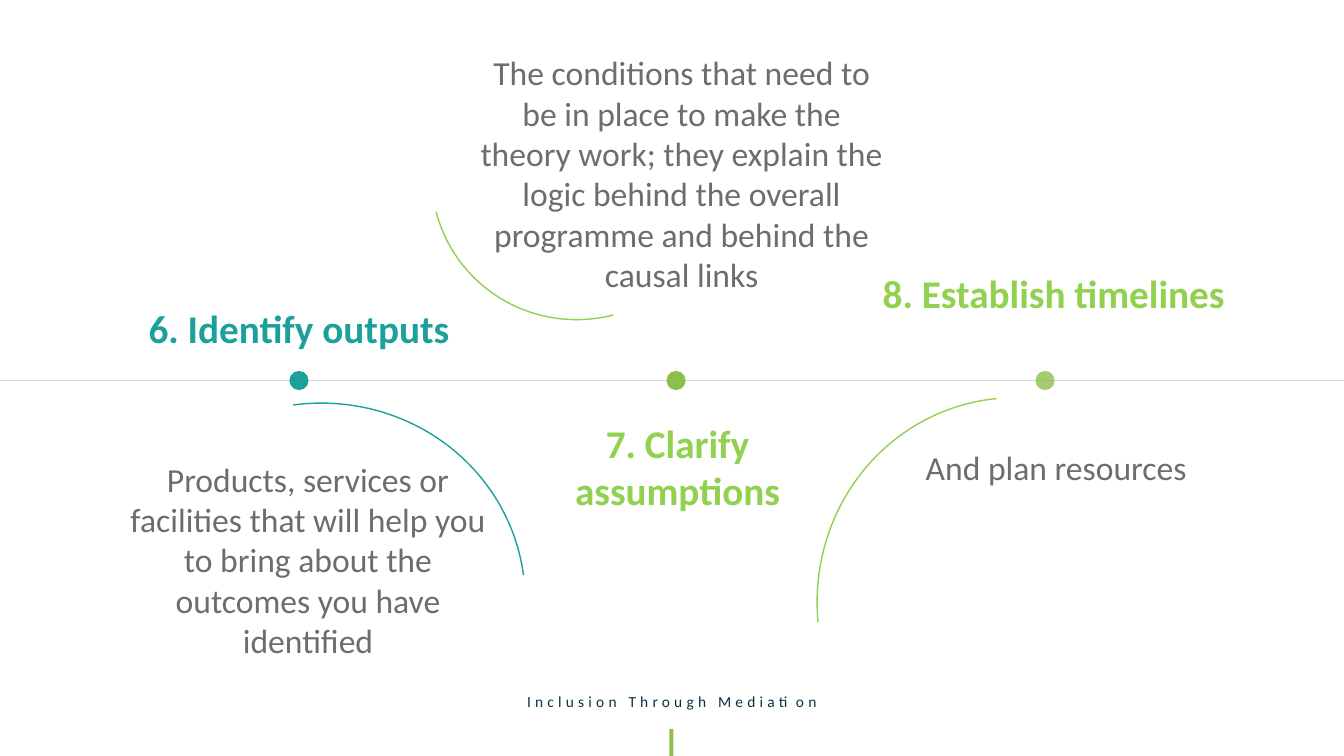
import dataclasses

import lxml.etree
import pptx
import pptx.dml.color
import pptx.enum.shapes
import pptx.enum.text
import pptx.oxml.ns
import pptx.util

Inches = pptx.util.Inches
Pt = pptx.util.Pt
Shape = pptx.enum.shapes.MSO_SHAPE


@dataclasses.dataclass(frozen=True)
class Theme:
    font: str = "Calibri"
    background: str = "FFFFFF"
    axis: str = "D9D9D9"
    teal: str = "1BA19A"
    green: str = "8CBF4B"
    lime: str = "92D050"
    body: str = "6D6E6C"
    footer: str = "08313F"
    heading_size: int = 28
    body_size: int = 24
    footer_size: int = 11


def rgb(color):
    return pptx.dml.color.RGBColor.from_string(color)


class TimelineSlide:
    def __init__(self, presentation, theme):
        self.theme = theme
        self.slide = presentation.slides.add_slide(presentation.slide_layouts[6])
        self.slide.background.fill.solid()
        self.slide.background.fill.fore_color.rgb = rgb(theme.background)

    def line(self, start, end, color, width):
        connector = self.slide.shapes.add_connector(
            pptx.enum.shapes.MSO_CONNECTOR.STRAIGHT, *map(Inches, start + end))
        connector.line.color.rgb = rgb(color)
        connector.line.width = Pt(width)
        lxml.etree.SubElement(
            connector._element.spPr, pptx.oxml.ns.qn("a:effectLst"))

    def solid(self, kind, box, color, opacity=100):
        shape = self.slide.shapes.add_shape(kind, *map(Inches, box))
        shape.shadow.inherit = False
        shape.fill.solid()
        shape.fill.fore_color.rgb = rgb(color)
        shape.line.fill.background()
        if opacity < 100:
            color_element = shape._element.spPr.find(
                ".//" + pptx.oxml.ns.qn("a:srgbClr"))
            lxml.etree.SubElement(
                color_element, pptx.oxml.ns.qn("a:alpha"), val=str(opacity * 1000))

    def arc(self, box, rotation, color):
        shape = self.slide.shapes.add_shape(Shape.ARC, *map(Inches, box))
        shape.shadow.inherit = False
        shape.rotation = rotation
        shape.fill.background()
        shape.line.color.rgb = rgb(color)
        shape.line.width = Pt(1)

    def text(self, box, text, size, color, bold=False, spacing=0):
        shape = self.slide.shapes.add_textbox(*map(Inches, box))
        frame = shape.text_frame
        frame.word_wrap = True
        frame.auto_size = pptx.enum.text.MSO_AUTO_SIZE.SHAPE_TO_FIT_TEXT
        paragraph = frame.paragraphs[0]
        paragraph.alignment = pptx.enum.text.PP_ALIGN.CENTER
        run = paragraph.add_run()
        run.text = text
        if spacing:
            run._r.get_or_add_rPr().set("spc", str(spacing * 100))
        paragraph.font.name = self.theme.font
        paragraph.font.size = Pt(size)
        paragraph.font.bold = bold
        paragraph.font.color.rgb = rgb(color)

    def heading(self, box, text, color):
        self.text(box, text, self.theme.heading_size, color, bold=True)

    def description(self, box, text):
        self.text(box, text, self.theme.body_size, self.theme.body)


def main():
    theme = Theme()
    presentation = pptx.Presentation()
    presentation.slide_width = Inches(13.33)
    presentation.slide_height = Inches(7.5)
    timeline = TimelineSlide(presentation, theme)

    timeline.line((0, 3.77), (13.33, 3.77), theme.axis, 0.5)
    for left, color, opacity in (
        (2.87, theme.teal, 100),
        (6.61, theme.green, 100),
        (10.27, theme.green, 80),
    ):
        timeline.solid(Shape.OVAL, (left, 3.68, 0.19, 0.19), color, opacity)

    timeline.solid(Shape.RECTANGLE, (6.64, 7.23, 0.04, 0.28), theme.green)
    timeline.text((0.01, 6.82, 13.31, 0.29), "Inclusion Through Mediation",
                  theme.footer_size, theme.footer, spacing=3)

    steps = (
        ("6. Identify outputs", (1.3, 2.97, 3.33, 0.57), theme.teal,
         "Products, services or facilities that will help you to bring about "
         "the outcomes you have identified", (1.17, 4.5, 3.77, 2.12),
         (1.13, 4, 4.08, 3.95), 352.4, theme.teal),
        ("7. Clarify assumptions", (5.23, 4.11, 2.98, 1.04), theme.lime,
         "The conditions that need to be in place to make the theory work; "
         "they explain the logic behind the overall programme and behind the "
         "causal links", (4.64, 0.47, 4.24, 2.52),
         (4.28, 0.31, 2.89, 2.86), 165.6, theme.lime),
        ("8. Establish timelines", (8.21, 2.62, 4.48, 0.57), theme.lime,
         "And plan resources", (8.77, 4.38, 3.41, 0.5),
         (8.04, 4.01, 4.08, 3.95), 264.5, theme.lime),
    )
    for (title, title_box, title_color, detail, detail_box,
         arc_box, rotation, arc_color) in steps:
        timeline.arc(arc_box, rotation, arc_color)
        timeline.heading(title_box, title, title_color)
        timeline.description(detail_box, detail)

    presentation.save("out.pptx")


if __name__ == "__main__":
    main()
